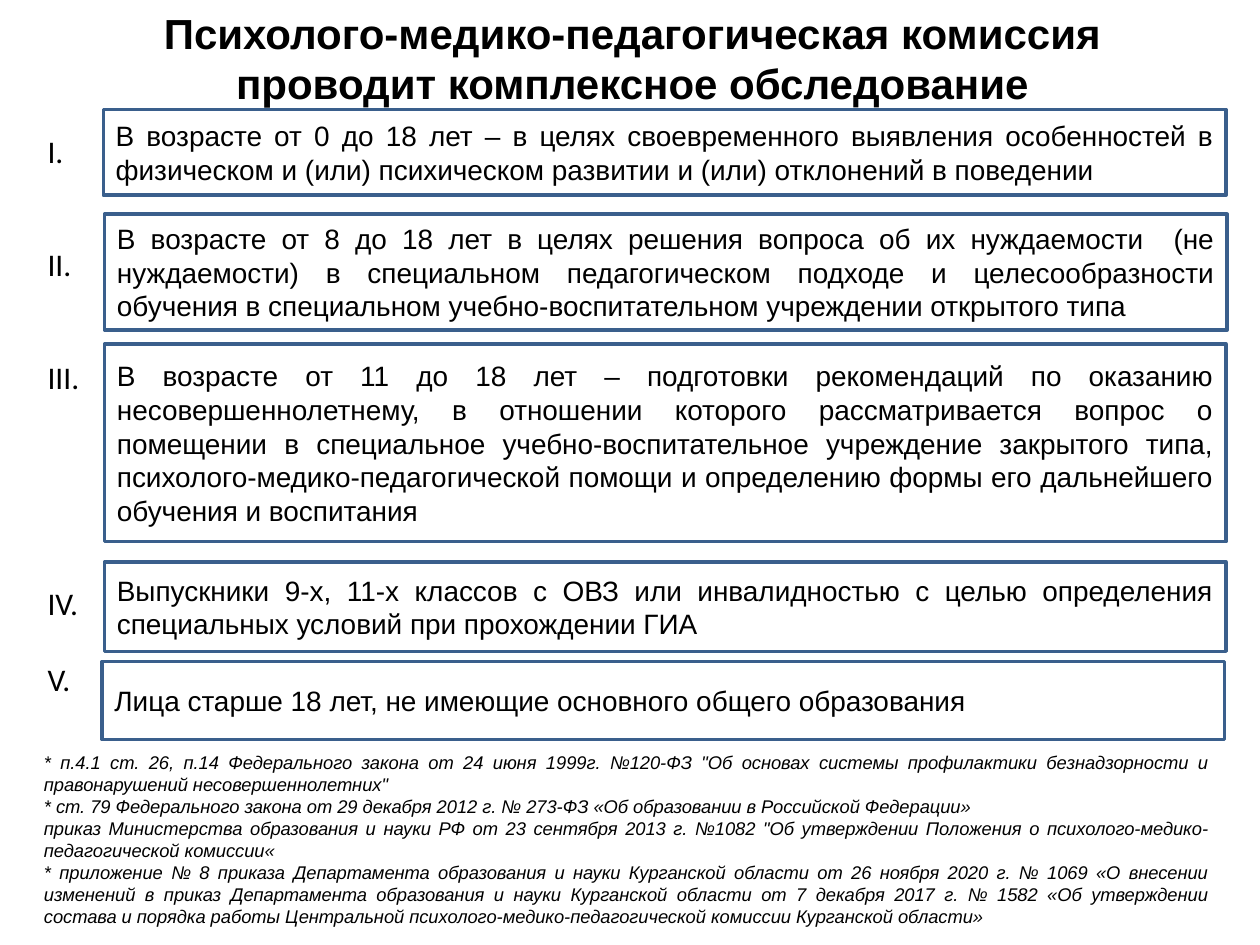
import pptx
import pptx.dml.color
import pptx.enum.shapes
import pptx.enum.text
import pptx.util

SCALE = 9144
ALIGN = pptx.enum.text.PP_ALIGN
ANCHOR = pptx.enum.text.MSO_ANCHOR

TITLE = ["Психолого-медико-педагогическая комиссия ",
         "проводит комплексное обследование "]
CARDS = [
    ((57, 0, 891, 68), "В возрасте от 0 до 18 лет – в целях своевременного выявления особенностей в физическом и (или) психическом развитии и (или) отклонений в поведении"),
    ((58, 83, 891, 92), "В возрасте от 8 до 18 лет в целях решения вопроса об их нуждаемости  (не нуждаемости) в специальном педагогическом подходе и целесообразности обучения в специальном учебно-воспитательном учреждении открытого типа"),
    ((58, 186, 890, 157), "В возрасте от 11 до 18 лет – подготовки рекомендаций по оказанию несовершеннолетнему, в отношении которого рассматривается вопрос о помещении в специальное учебно-воспитательное учреждение закрытого типа, психолого-медико-педагогической помощи и определению формы его дальнейшего обучения и воспитания"),
    ((58, 359, 890, 71), "Выпускники 9-х, 11-х классов с ОВЗ или инвалидностью с целью определения специальных условий при прохождении ГИА"),
    ((56, 438, 891, 62), "Лица старше 18 лет, не имеющие основного общего образования"),
]
MARKS = ["I.", "II.", "III.", "IV.", "V."]
SKIPS = [0, 2, 2, 5, 1]
NOTES = [
    "* п.4.1 ст. 26, п.14 Федерального закона от 24 июня 1999г. №120-ФЗ \"Об основах системы профилактики безнадзорности и правонарушений несовершеннолетних\"",
    "* ст. 79 Федерального закона от 29 декабря 2012 г. № 273-ФЗ «Об образовании в Российской Федерации» ",
    "приказ Министерства образования и науки РФ от 23 сентября 2013 г. №1082 \"Об утверждении Положения о психолого-медико-педагогической комиссии«",
    "* приложение № 8 приказа Департамента образования и науки Курганской области от 26 ноября 2020 г. № 1069 «О внесении изменений в приказ Департамента образования и науки Курганской области от 7 декабря 2017 г. № 1582 «Об утверждении состава и порядка работы Центральной психолого-медико-педагогической комиссии Курганской области» ",
]


def px(*sizes):
    """Turn px lengths into EMU."""
    return [pptx.util.Emu(size * SCALE) for size in sizes]


def paint(target, color):
    """Set a colour from a hex string."""
    target.rgb = pptx.dml.color.RGBColor.from_string(color)


def write(shape, lines, size=16, font="Arial", color="000000", bold=False,
          italic=False, align=ALIGN.JUSTIFY, anchor=ANCHOR.TOP, gaps=None):
    """Fill a shape with one paragraph per line."""
    frame = shape.text_frame
    frame.word_wrap = True
    frame.vertical_anchor = anchor
    for i, line in enumerate(lines):
        para = frame.add_paragraph() if i else frame.paragraphs[0]
        para.alignment = align
        if gaps:
            para.space_before = pptx.util.Pt(gaps[i])
        run = para.add_run()
        run.text = line
        run.font.size = pptx.util.Pt(size)
        run.font.name = font
        run.font.bold = bold
        run.font.italic = italic
        paint(run.font.color, color)


def label(slide, box, lines, **style):
    """Place a plain text box."""
    write(slide.shapes.add_textbox(*px(*box)), lines, **style)


def card(slide, box, text):
    """Place one outlined box with its text."""
    shape = slide.shapes.add_shape(
        pptx.enum.shapes.MSO_SHAPE.RECTANGLE, *px(*box))
    shape.shadow.inherit = False
    shape.fill.background()
    paint(shape.line.color, "3A5F8C")
    shape.line.width = pptx.util.Pt(2)
    write(shape, [text], anchor=ANCHOR.MIDDLE)


def group(slide, box):
    """Place the numerals and the cards beside them."""
    left, top, _, high = box
    gaps = [21.5 * skip for skip in SKIPS]
    label(slide, (left + 3, top + 13, 54, high - 36), MARKS, size=18,
          font="Calibri", align=ALIGN.LEFT, gaps=gaps)
    for (x, y, w, h), text in CARDS:
        card(slide, (left + x, top + y, w, h), text)


def main():
    """Build and save the slide."""
    deck = pptx.Presentation()
    deck.slide_width, deck.slide_height = px(1000, 750)
    slide = deck.slides.add_slide(deck.slide_layouts[6])
    label(slide, (25, 1, 963, 91), TITLE, size=24, bold=True,
          align=ALIGN.CENTER)
    group(slide, (25, 87, 949, 500))
    label(slide, (25, 591, 945, 151), NOTES, size=10.5, italic=True)
    deck.save("out.pptx")


if __name__ == "__main__":
    main()
